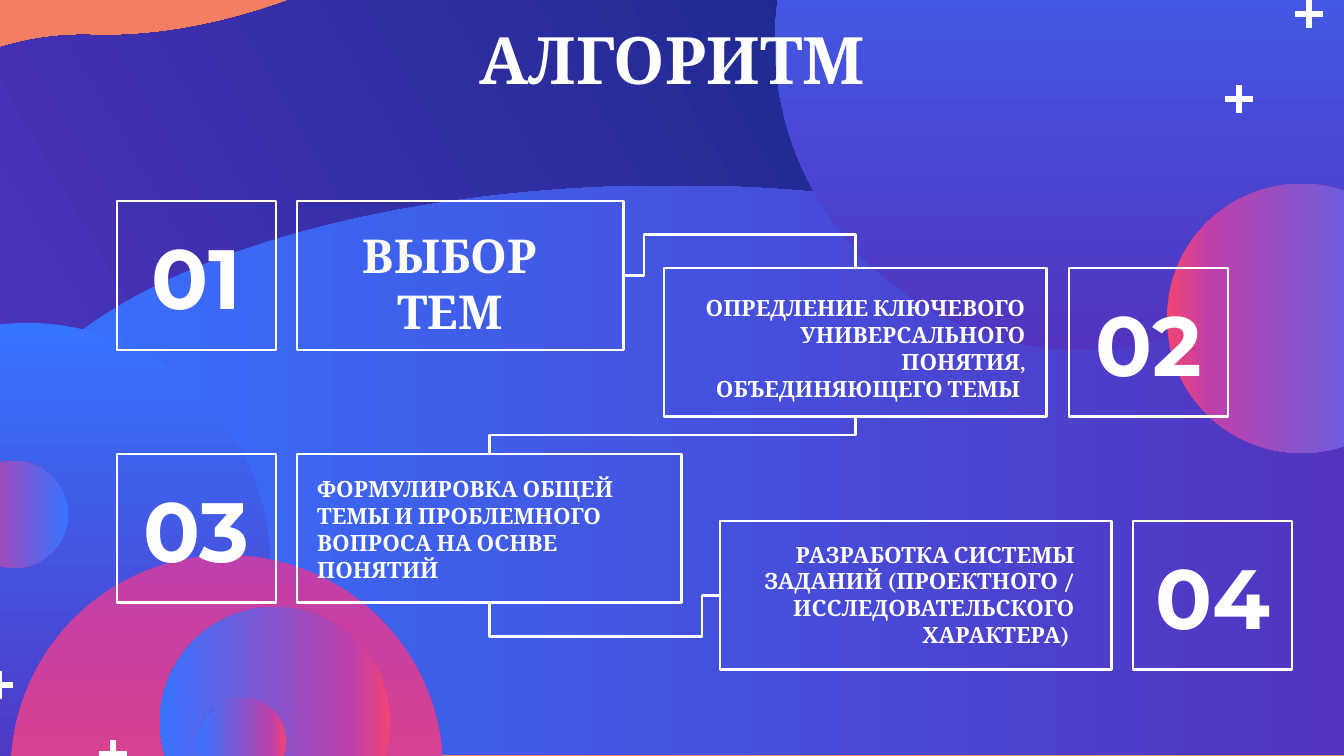
"""Build the "АЛГОРИТМ" slide: four numbered steps joined by elbow connectors."""
import lxml.etree
import pptx
import pptx.dml.color
import pptx.enum.shapes
import pptx.enum.text
import pptx.oxml
import pptx.oxml.ns
import pptx.util

PX = 914400 / 134.4
SHAPE = pptx.enum.shapes.MSO_SHAPE
ALIGN = pptx.enum.text.PP_ALIGN

THEME = {
    "white": "FFFFFF", "coral": "F27E63",
    "night": [(0, "18298C"), (100, "5234BF")],
    "sky": [(0, "3673FF"), (100, "5234BF")],
    "pink": [(0, "BF3FAA"), (100, "F24472")],
    "sunset": [(0, "F24472"), (16, "BF3FAA"), (100, "3673FF")],
    "serif": "Cambria", "sans": "Montserrat",
    "title": 35, "number": 45, "lead": 25, "body": 12, "outline": 1.5, "hairline": 0.75,
}

TITLE = ("АЛГОРИТМ", (106, 23, 1133, 71))

STEP_TOP, STEP_HEIGHT, NUMBER_WIDTH = (201, 268, 454, 521), 149, 159
STEPS = [
    {"number": "01", "number_x": 117, "x": 297, "width": 327, "align": ALIGN.CENTER,
     "size": "lead", "text": "ВЫБОР ТЕМ", "text_at": (304, 226, 292, 113)},
    {"number": "02", "number_x": 1069, "x": 664, "width": 383, "align": ALIGN.RIGHT,
     "size": "body", "text": "ОПРЕДЛЕНИЕ КЛЮЧЕВОГО УНИВЕРСАЛЬНОГО ПОНЯТИЯ, ОБЪЕДИНЯЮЩЕГО ТЕМЫ ",
     "text_at": (671, 289, 368, 118)},
    {"number": "03", "number_x": 117, "x": 297, "width": 385, "align": ALIGN.LEFT,
     "size": "body", "text": "ФОРМУЛИРОВКА ОБЩЕЙ ТЕМЫ И ПРОБЛЕМНОГО ВОПРОСА НА ОСНВЕ ПОНЯТИЙ",
     "text_at": (304, 470, 368, 118)},
    {"number": "04", "number_x": 1133, "x": 720, "width": 392, "align": ALIGN.RIGHT,
     "size": "body", "text": "РАЗРАБОТКА СИСТЕМЫ ЗАДАНИЙ (ПРОЕКТНОГО / ИССЛЕДОВАТЕЛЬСКОГО ХАРАКТЕРА) ",
     "text_at": (720, 528, 368, 133)},
]

TOP, LEFT, BOTTOM, RIGHT = range(4)
LINKS = [
    {"sides": (RIGHT, TOP), "bends": [("x", 644), ("y", 235)]},
    {"sides": (BOTTOM, TOP), "bends": [("y", 435)]},
    {"sides": (BOTTOM, LEFT), "bends": [("y", 637), ("x", 702)]},
]

WAVE_START = (757, -56)
WAVE_CURVES = [
    ((728, -55), (703, -58), (679, -62)), ((595, -77), (474, -75), (320, -12)),
    ((239, 22), (159, 38), (89, 35)), ((48, 34), (-4, 42), (-60, 73)),
    ((-59, 74), (-58, 75), (-56, 78)), ((-26, 116), (-19, 169), (-35, 227)),
    ((-66, 351), (-20, 454), (105, 500)), ((296, 567), (612, 472), (831, 278)),
    ((857, 254), (882, 230), (905, 206)),
]
HILL = (387, -207, 570, 1355)
CIRCLES = [
    (775, -267, 617, "sky", 90), (-215, 323, 485, "sky", 90), (-39, 461, 107, "sunset", 0),
    (11, 555, 432, "pink", 90), (1167, 184, 269, "sunset", 0),
    (160, 607, 230, "sunset", 180), (198, 698, 88, "sunset", 180),
]
PLUS_CENTRES = [(1239, 99), (-1, 685), (113, 754), (1309, 14)]
PLUS_LONG, PLUS_SHORT = 27, 5


def emu(*lengths):
    return [pptx.util.Emu(round(length * PX)) for length in lengths]


def color(name):
    return pptx.dml.color.RGBColor.from_string(THEME[name])


def paint_gradient(shape, name, angle):
    shape.shadow.inherit = False
    shape.line.fill.background()
    shape.fill.background()
    stops = "".join(f'<a:gs pos="{at * 1000}"><a:srgbClr val="{value}"/></a:gs>'
                    for at, value in THEME[name])
    gradient = pptx.oxml.parse_xml(
        f'<a:gradFill {pptx.oxml.ns.nsdecls("a")} rotWithShape="1"><a:gsLst>{stops}</a:gsLst>'
        f'<a:lin ang="{angle * 60000}" scaled="0"/></a:gradFill>')
    properties = shape._element.spPr
    properties.replace(properties.find(pptx.oxml.ns.qn("a:noFill")), gradient)


def outline(line, width):
    line.color.rgb = color("white")
    line.width = pptx.util.Pt(THEME[width])


def add_wave(page):
    points, start = [], WAVE_START
    for curve in WAVE_CURVES:
        for step in range(1, 13):
            t = step / 12
            weights = ((1 - t) ** 3, 3 * t * (1 - t) ** 2, 3 * t * t * (1 - t), t ** 3)
            points.append(tuple(sum(w * p[axis] for w, p in zip(weights, (start, *curve)))
                                for axis in (0, 1)))
        start = curve[-1]
    builder = page.shapes.build_freeform(*emu(*WAVE_START), scale=1.0)
    builder.add_line_segments([emu(*point) for point in points], close=True)
    paint_gradient(builder.convert_to_shape(), "night", 150)


def add_backdrop(page):
    page.background.fill.solid()
    page.background.fill.fore_color.rgb = color("coral")
    add_wave(page)
    hill = page.shapes.add_shape(SHAPE.FLOWCHART_DELAY, *emu(*HILL))
    hill.rotation = 270
    paint_gradient(hill, "sky", 90)
    for x, y, size, fill, angle in CIRCLES:
        circle = page.shapes.add_shape(SHAPE.OVAL, *emu(x, y, size, size))
        paint_gradient(circle, fill, angle)
    for x, y in PLUS_CENTRES:
        for width, height in ((PLUS_SHORT, PLUS_LONG), (PLUS_LONG, PLUS_SHORT)):
            bar = page.shapes.add_shape(
                SHAPE.RECTANGLE, *emu(x - width / 2, y - height / 2, width, height))
            bar.shadow.inherit = False
            bar.fill.solid()
            bar.fill.fore_color.rgb = color("white")
            outline(bar.line, "hairline")


def write(box, text, size, font="serif", align=ALIGN.CENTER, after=0):
    frame = box.text_frame
    frame.text = text
    frame.word_wrap = True
    frame.auto_size = pptx.enum.text.MSO_AUTO_SIZE.NONE
    frame.vertical_anchor = pptx.enum.text.MSO_ANCHOR.MIDDLE
    frame.margin_left = frame.margin_right = pptx.util.Inches(0.1)
    frame.margin_top = frame.margin_bottom = pptx.util.Inches(0.1)
    para = frame.paragraphs[0]
    properties = para._p.get_or_add_pPr()
    properties.set("marL", "0")
    properties.set("indent", "0")
    lxml.etree.SubElement(properties, pptx.oxml.ns.qn("a:buNone"))
    para.alignment = align
    para.space_before, para.space_after = pptx.util.Pt(0), pptx.util.Pt(after)
    span = para.runs[0]
    span.font.name, span.font.size = THEME[font], pptx.util.Pt(THEME[size])
    span.font.bold = True
    span.font.color.rgb = color("white")


def place(page, holder, area):
    holder.left, holder.top, holder.width, holder.height = emu(*area)
    page.shapes._spTree.append(holder._element)


def add_frame(page, x, y, width):
    frame = page.shapes.add_shape(SHAPE.RECTANGLE, *emu(x, y, width, STEP_HEIGHT))
    frame.shadow.inherit = False
    frame.fill.background()
    outline(frame.line, "outline")
    return frame


def add_link(page, source, target, sides, bends):
    link = page.shapes.add_connector(pptx.enum.shapes.MSO_CONNECTOR.ELBOW, 0, 0, 0, 0)
    link.begin_connect(source, sides[0])
    link.end_connect(target, sides[1])
    start = {"x": link.begin_x, "y": link.begin_y}
    reach = {"x": link.end_x - link.begin_x, "y": link.end_y - link.begin_y}
    turned = sides[0] == BOTTOM
    along, across = ("y", "x") if turned else ("x", "y")
    width, height = abs(reach[along]), abs(reach[across])
    link.left = round(start["x"] + (reach["x"] - width) / 2)
    link.top = round(start["y"] + (reach["y"] - height) / 2)
    link.width, link.height = width, height
    properties = link._element.spPr
    frame = properties.find(pptx.oxml.ns.qn("a:xfrm"))
    frame.set("rot", "5400000" if turned else "0")
    frame.set("flipH", str(int(reach[along] < 0)))
    frame.set("flipV", str(int((reach[across] < 0) != turned)))
    geometry = properties.find(pptx.oxml.ns.qn("a:prstGeom"))
    geometry.set("prst", f"bentConnector{len(bends) + 2}")
    guides = geometry.find(pptx.oxml.ns.qn("a:avLst"))
    for index, (axis, position) in enumerate(bends, 1):
        ratio = (position * PX - start[axis]) / reach[axis]
        lxml.etree.SubElement(guides, pptx.oxml.ns.qn("a:gd"), name=f"adj{index}",
                              fmla=f"val {round(ratio * 100000)}")
    outline(link.line, "outline")
    lxml.etree.SubElement(properties, pptx.oxml.ns.qn("a:effectLst"))


def main():
    deck = pptx.Presentation()
    deck.slide_width, deck.slide_height = emu(1344, 756)
    page = deck.slides.add_slide(deck.slide_layouts[3])
    title, *holders = page.placeholders
    add_backdrop(page)
    place(page, title, TITLE[1])
    write(title, TITLE[0], "title")
    frames = [add_frame(page, step["x"], y, step["width"]) for step, y in zip(STEPS, STEP_TOP)]
    for source, target, link in zip(frames, frames[1:], LINKS):
        add_link(page, source, target, **link)
    for index, (step, y) in enumerate(zip(STEPS, STEP_TOP)):
        write(add_frame(page, step["number_x"], y, NUMBER_WIDTH), step["number"], "number", "sans")
        box = holders[index] if index < len(holders) else page.shapes.add_textbox(0, 0, 0, 0)
        place(page, box, step["text_at"])
        write(box, step["text"], step["size"], align=step["align"], after=16)
    deck.save("out.pptx")


if __name__ == "__main__":
    main()
